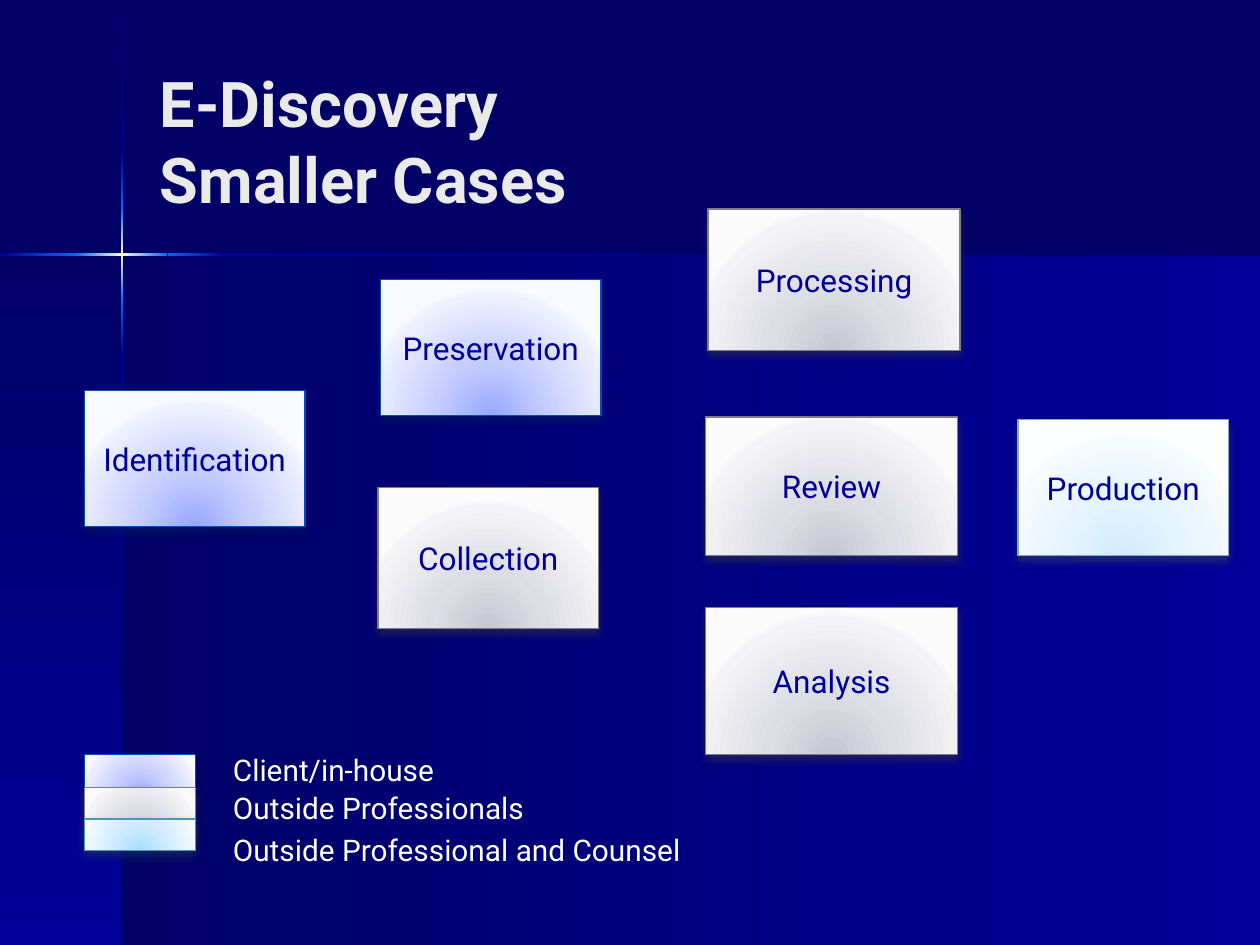
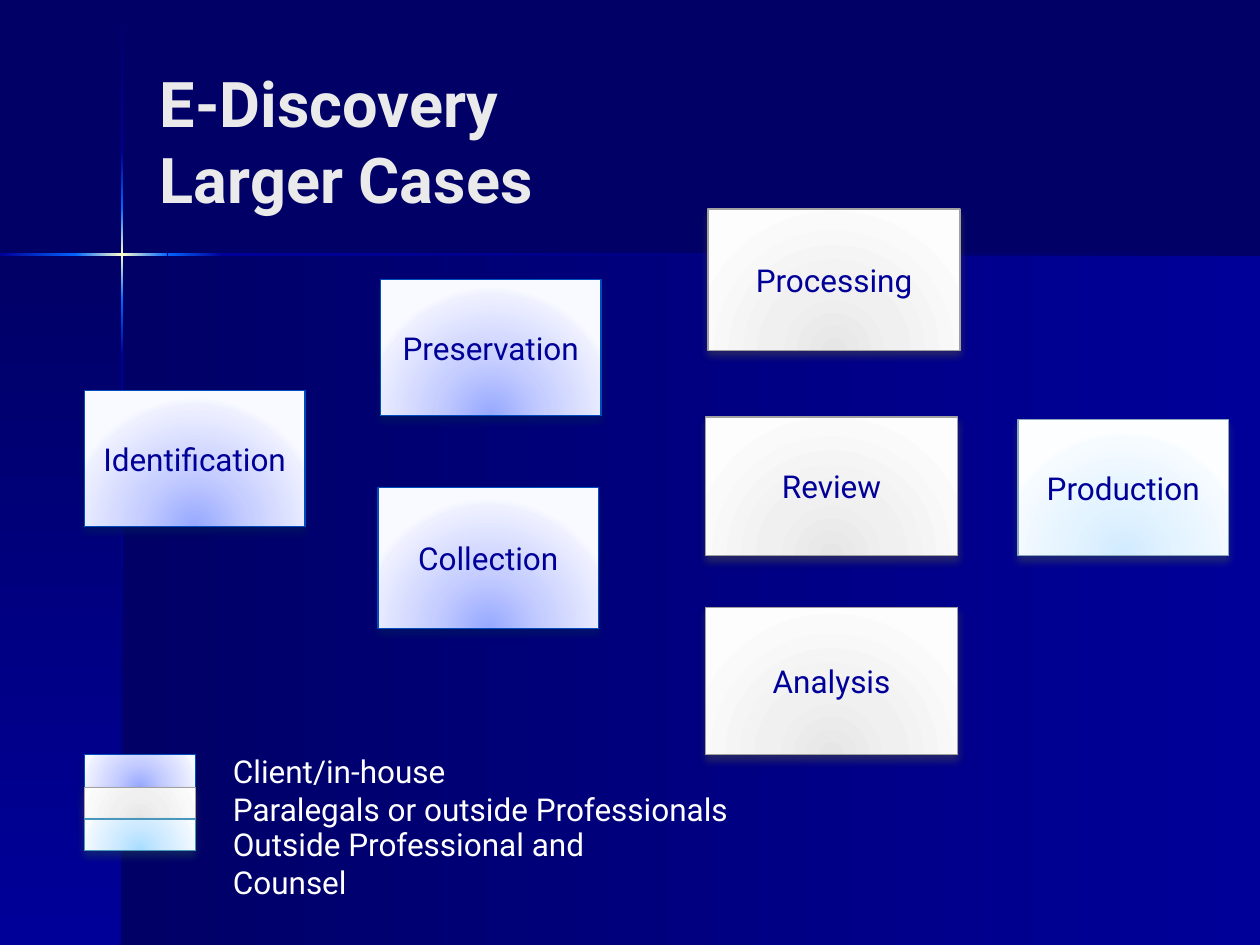
import pptx
import pptx.dml.color
import pptx.enum.shapes
import pptx.enum.text
import pptx.oxml
import pptx.oxml.ns
import pptx.util

Inches, Pt = pptx.util.Inches, pptx.util.Pt
FONT = "Roboto"
COLORS = {"navy": "000066", "blue": "000099", "bright": "0066FF", "glow": "FFFFCC",
          "title": "EAEAEA", "white": "FFFFFF"}

# Box tones: four gradient colours, outline, shadow
STOPS = (0, 43, 93, 100)
TONES = {
    "client": ("97A8FF", "C6CEFF", "EEF0FF", "F9FAFF", "004BBD", "00245A"),
    "outside": ("C7C7D2", "DDDDE5", "F4F4F6", "FBFBFC", "7E7E88", "3C3C41"),
    "mixed": ("E6E6E6", "F0F0F0", "FAFAFA", "FDFDFD", "A1A1A1", "4D4D4D"),
    "counsel": ("D1EBFF", "E3F3FF", "F6FBFF", "FCFEFF", "87A7BD", "404F5A"),
    "key": ("A8DDFF", "CEEAFF", "F0F8FF", "FAFDFF", "4A97BE", "22485B"),
}
RADIAL = '<a:path path="circle"><a:fillToRect l="50000" t="130000" r="50000" b="-30000"/></a:path>'

# Backdrop bars: left, top, width, height, angle, colours
FADE, RISE = ("navy", "blue"), ("blue", "bright")
FLARE = ("bright", "glow", "bright")
BARS = [
    (0.97, 2.02, 9.03, 5.48, 0, FADE),
    (0, 2.02, 0.97, 5.48, 90, FADE),
    (0.96, 0.01, 0.02, 1.21, 90, FADE),
    (0.96, 2.82, 0.02, 4.68, 90, FADE[::-1]),
    (1.77, 2.01, 8.23, 0.02, 0, FADE[::-1]),
    (0.96, 2.38, 0.02, 0.44, 90, RISE[::-1]),
    (0.96, 1.21, 0.02, 0.44, 90, RISE),
    (0.96, 1.65, 0.02, 0.73, 90, FLARE),
    (0, 2.01, 0.61, 0.02, 0, RISE),
    (1.33, 2.01, 0.44, 0.02, 0, RISE[::-1]),
    (0.6, 2.01, 0.73, 0.02, 0, FLARE),
]

# Process steps: label, left, top, width, height
STEPS = [
    ("Identification", 0.67, 3.1, 1.75, 1.08),
    ("Preservation", 3.02, 2.22, 1.75, 1.08),
    ("Collection", 3, 3.87, 1.75, 1.12),
    ("Processing", 5.62, 1.66, 2, 1.12),
    ("Review", 5.6, 3.31, 2, 1.1),
    ("Analysis", 5.6, 4.82, 2, 1.17),
    ("Production", 8.08, 3.33, 1.67, 1.08),
]

# Per slide: title, step tones, legend size, legend rows
# Legend row: tone, swatch height, label, label top, label width
COUNSEL = "Outside Professional and Counsel"
CASES = [
    ("E-Discovery\vSmaller Cases", ["client"] * 2 + ["outside"] * 4 + ["counsel"], 17, [
        ("client", 0.33, "Client/in-house", 5.92, 2.15),
        ("outside", 0.38, "Outside Professionals", 6.22, 3.25),
        ("key", 0.25, COUNSEL, 6.55, 3.87)]),
    ("E-Discovery\vLarger Cases", ["client"] * 3 + ["mixed"] * 3 + ["counsel"], 18, [
        ("client", 0.26, "Client/in-house", 5.92, 2.15),
        ("mixed", 0.25, "Paralegals or outside Professionals", 6.22, 4.85),
        ("key", 0.25, COUNSEL, 6.5, 3.87)]),
]


def rgb(color):
    return pptx.dml.color.RGBColor.from_string(color)


def node(xml):
    return pptx.oxml.parse_xml(xml.replace(" ", f' {pptx.oxml.ns.nsdecls("a")} ', 1))


class Deck:
    def __init__(self):
        self.prs = pptx.Presentation()
        self.prs.slide_width, self.prs.slide_height = Inches(10), Inches(7.5)
        self.slide = None

    def page(self):
        self.slide = self.prs.slides.add_slide(self.prs.slide_layouts[6])
        fill = self.slide.background.fill
        fill.solid()
        fill.fore_color.rgb = rgb(COLORS["navy"])
        for *area, angle, names in BARS:
            bar = self.rect(*area)
            bar.line.fill.background()
            stops = [(100 * i / (len(names) - 1), COLORS[n]) for i, n in enumerate(names)]
            self.blend(bar, stops, f'<a:lin ang="{angle * 60000}" scaled="1"/>')

    def rect(self, *area):
        kind = pptx.enum.shapes.MSO_SHAPE.RECTANGLE
        shape = self.slide.shapes.add_shape(kind, *map(Inches, area))
        shape.shadow.inherit = False
        return shape

    def blend(self, shape, stops, shade):
        """Fill a shape with a gradient."""
        marks = "".join(f'<a:gs pos="{int(pos * 1000)}"><a:srgbClr val="{color}"/></a:gs>'
                        for pos, color in stops)
        shape.fill.background()
        props = shape.element.spPr
        props.replace(props.find(pptx.oxml.ns.qn("a:noFill")), node(
            f'<a:gradFill rotWithShape="1"><a:gsLst>{marks}</a:gsLst>{shade}</a:gradFill>'))

    def box(self, tone, *area, text=""):
        *colors, edge, shade = TONES[tone]
        shape = self.rect(*area)
        self.blend(shape, zip(STOPS, colors), RADIAL)
        shape.line.color.rgb = rgb(edge)
        shape.line.width = Pt(0.75)
        shape.element.spPr.find(pptx.oxml.ns.qn("a:effectLst")).append(node(
            f'<a:outerShdw blurRad="{Pt(4.5)}" dist="{Pt(3)}" dir="5400000" rotWithShape="0">'
            f'<a:srgbClr val="{shade}"><a:alpha val="48000"/></a:srgbClr></a:outerShdw>'))
        if text:
            self.style(shape, text, 18, COLORS["blue"])
            shape.text_frame.vertical_anchor = pptx.enum.text.MSO_ANCHOR.MIDDLE
            shape.text_frame.paragraphs[0].alignment = pptx.enum.text.PP_ALIGN.CENTER

    def style(self, shape, text, size, color, bold=False):
        frame = shape.text_frame
        frame.text = text
        frame.word_wrap = True
        for run in frame.paragraphs[0].runs:
            run.font.name, run.font.size, run.font.bold = FONT, Pt(size), bold
            run.font.color.rgb = rgb(color)

    def label(self, text, size, color, *area, bold=False):
        shape = self.slide.shapes.add_textbox(*map(Inches, area))
        self.style(shape, text, size, color, bold)
        return shape.text_frame

    def title(self, text):
        frame = self.label(text, 36, COLORS["title"], 1.17, 0.33, 8.25, 1.57, bold=True)
        frame.vertical_anchor = pptx.enum.text.MSO_ANCHOR.MIDDLE

    def legend(self, rows, size):
        for i, (tone, height, *_) in enumerate(rows):
            self.box(tone, 0.67, (5.99, 6.25, 6.5)[i], 0.88, height)
        for _, _, text, top, width in rows:
            frame = self.label(text, size, COLORS["white"], 1.75, top, width, 0.4)
            frame.auto_size = pptx.enum.text.MSO_AUTO_SIZE.SHAPE_TO_FIT_TEXT


def main():
    deck = Deck()
    for title, tones, size, rows in CASES:
        deck.page()
        for tone, (text, *area) in zip(tones, STEPS):
            deck.box(tone, *area, text=text)
        deck.title(title)
        deck.legend(rows, size)
    deck.prs.save("out.pptx")


if __name__ == "__main__":
    main()
